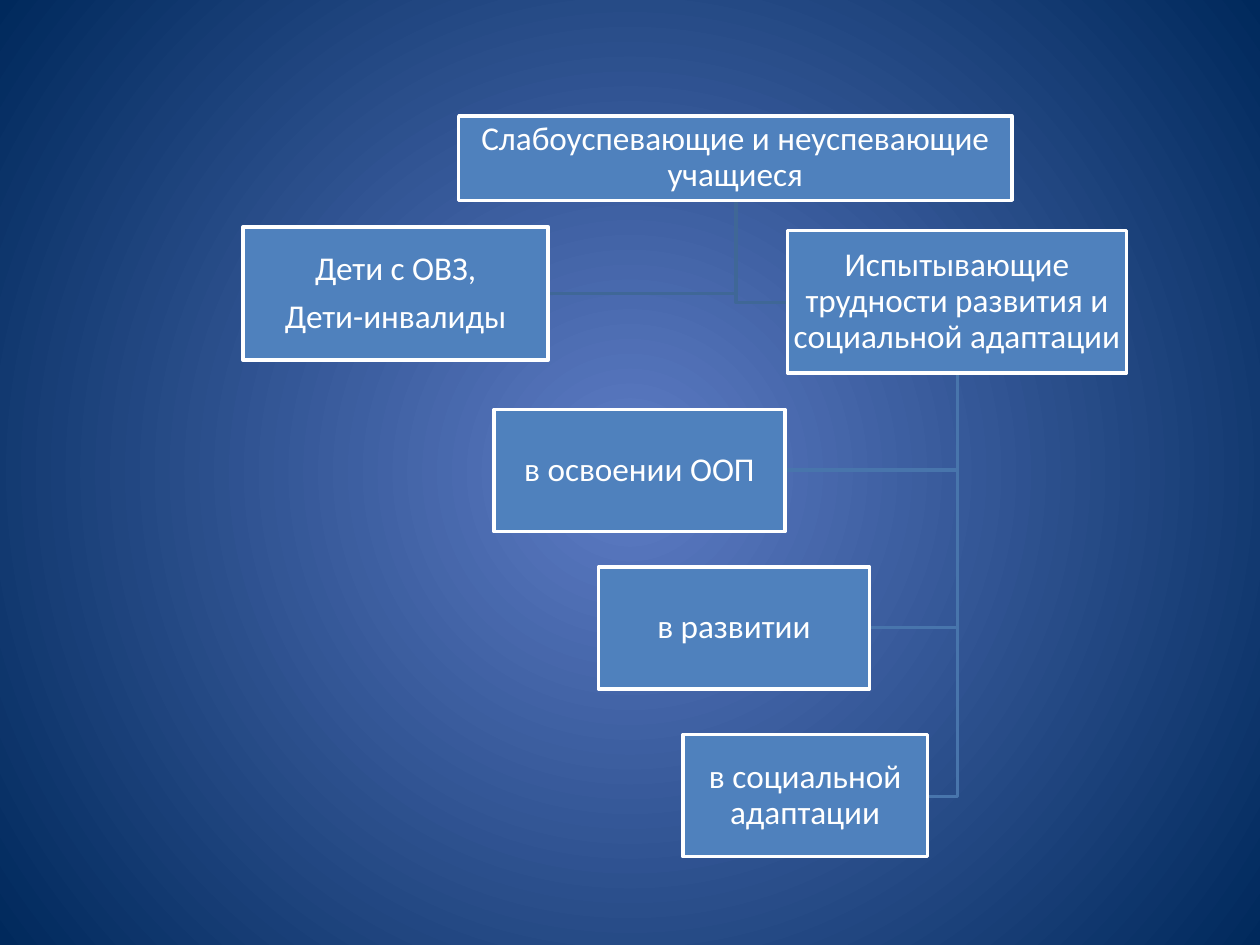
from lxml import etree
from pptx import Presentation
from pptx.dml.color import RGBColor
from pptx.enum.shapes import MSO_SHAPE
from pptx.enum.text import MSO_ANCHOR, PP_ALIGN
from pptx.oxml.ns import qn
from pptx.util import Inches, Pt

COLORS = {
    "glow": "5E7CC5",
    "edge": "00295C",
    "box": "4F81BD",
    "white": "FFFFFF",
    "link_top": "3F6797",
    "link_sub": "4875AC",
}


def rgb(name):
    return RGBColor.from_string(COLORS[name])


def write_text(tf, text, size=19, font="Calibri", color="white", gap=6.65):
    """Fill a text frame with one centred paragraph per line of text."""
    tf.word_wrap = True
    tf.vertical_anchor = MSO_ANCHOR.MIDDLE
    tf.margin_left = tf.margin_right = tf.margin_top = tf.margin_bottom = Inches(0.01)
    lines = text.split("\n")
    for i, line in enumerate(lines):
        p = tf.paragraphs[0] if i == 0 else tf.add_paragraph()
        p.alignment = PP_ALIGN.CENTER
        p.line_spacing = 0.9
        p.space_after = Pt(gap if i < len(lines) - 1 else 0)
        r = p.add_run()
        r.text = line
        r.font.size = Pt(size)
        r.font.name = font
        r.font.color.rgb = rgb(color)


prs = Presentation()
prs.slide_width, prs.slide_height = Inches(10), Inches(7.5)
s = prs.slides.add_slide(prs.slide_layouts[6])

# Radial background, light in the centre
fill = s.background.fill
fill.gradient()
for stop, name in zip(fill.gradient_stops, ("glow", "edge")):
    stop.color.rgb = rgb(name)
grad = next(s.background._cSld.iter(qn("a:gradFill")))
lin = grad.find(qn("a:lin"))
radial = etree.Element(qn("a:path"), path="circle")
etree.SubElement(radial, qn("a:fillToRect"), l="50000", t="50000", r="50000", b="50000")
grad.replace(lin, radial)

# Elbow links: down from the parent, then across to the child
links = [
    (5.84, 1.59, 4.35, 2.33, "link_top"),
    (7.6, 2.97, 7.36, 6.32, "link_sub"),
    (7.6, 2.97, 6.9, 4.98, "link_sub"),
    (7.6, 2.97, 6.23, 3.73, "link_sub"),
    (5.84, 1.59, 6.25, 2.4, "link_top"),
]
for x1, y1, x2, y2, color in links:
    fb = s.shapes.build_freeform(Inches(x1), Inches(y1))
    fb.add_line_segments(
        [(Inches(x1), Inches(y2)), (Inches(x2), Inches(y2))], close=False
    )
    sp = fb.convert_to_shape()
    sp.shadow.inherit = False
    sp.fill.background()
    sp.line.color.rgb = rgb(color)
    sp.line.width = Pt(2)

# Boxes of the hierarchy
boxes = [
    (3.64, 0.92, 4.39, 0.67, "Слабоуспевающие и неуспевающие учащиеся"),
    (6.25, 1.83, 2.69, 1.13, "Испытывающие трудности развития и социальной адаптации"),
    (3.92, 3.25, 2.31, 0.97, "в освоении ООП"),
    (4.75, 4.5, 2.15, 0.97, "в развитии"),
    (5.42, 5.83, 1.94, 0.97, "в социальной адаптации"),
    (1.93, 1.8, 2.42, 1.06, "Дети с ОВЗ,\nДети-инвалиды"),
]
for x, y, w, h, text in boxes:
    sp = s.shapes.add_shape(
        MSO_SHAPE.RECTANGLE, Inches(x), Inches(y), Inches(w), Inches(h)
    )
    sp.shadow.inherit = False
    sp.fill.solid()
    sp.fill.fore_color.rgb = rgb("box")
    sp.line.color.rgb = rgb("white")
    sp.line.width = Pt(2)
    write_text(sp.text_frame, text)

prs.save("out.pptx")
